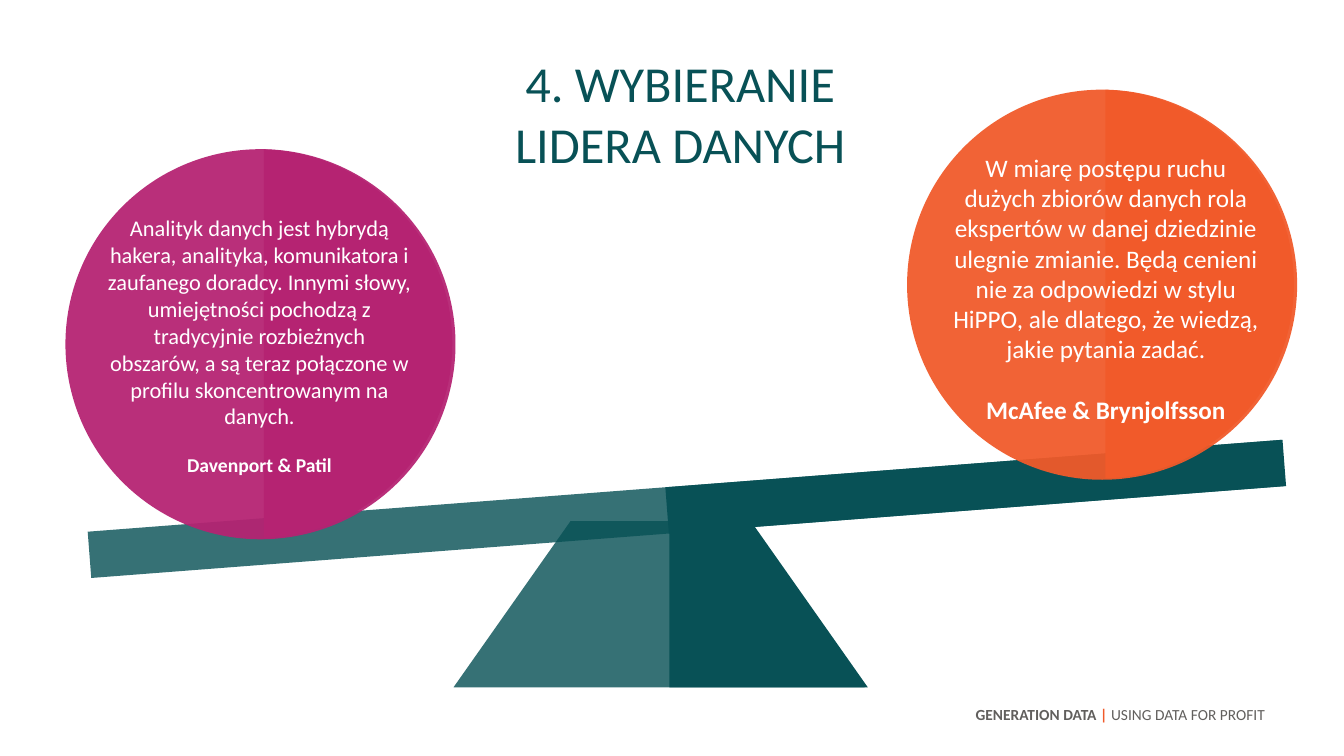
from math import acos, cos, sin

from lxml.etree import SubElement
from pptx import Presentation
from pptx.dml.color import RGBColor
from pptx.enum.shapes import MSO_SHAPE as Preset
from pptx.enum.text import MSO_ANCHOR as Anchor, MSO_AUTO_SIZE as AutoSize, PP_ALIGN as Align
from pptx.oxml.ns import qn
from pptx.util import Cm, Pt

TEAL = RGBColor(0x08, 0x51, 0x56)
MAGENTA = RGBColor(0xB5, 0x23, 0x72)
ORANGE = RGBColor(0xF1, 0x5A, 0x2A)
GREY = RGBColor(0x61, 0x5F, 0x5D)
WHITE = RGBColor(0xFF, 0xFF, 0xFF)

BALL_SIZE = 9.83
TITLE_ONLY = 5


class SlideBuilder:
    font = "Calibri"

    def __init__(self, presentation):
        self.slide = presentation.slides.add_slide(presentation.slide_layouts[TITLE_ONLY])
        self.shapes = self.slide.shapes

    def paint(self, shape, color, opacity=100):
        shape.shadow.inherit = False
        shape.line.fill.background()
        shape.fill.solid()
        shape.fill.fore_color.rgb = color
        if opacity < 100:
            color_node = shape.element.spPr.find(qn("a:solidFill"))[0]
            SubElement(color_node, qn("a:alpha"), val=str(opacity * 1000))

    def preset(self, kind, box, color, opacity=100, rotation=0):
        shape = self.shapes.add_shape(kind, *map(Cm, box))
        shape.rotation = rotation
        self.paint(shape, color, opacity)

    def outline(self, points, color, opacity=100):
        start, *rest = [(Cm(x), Cm(y)) for x, y in points]
        builder = self.shapes.build_freeform(*start)
        builder.add_line_segments(rest, close=True)
        self.paint(builder.convert_to_shape(), color, opacity)

    def style(self, run, size, color, bold=False):
        run.font.name = self.font
        run.font.size = Pt(size)
        run.font.bold = bold
        run.font.color.rgb = color

    def title(self, text, box, size, color):
        heading = self.shapes.title
        heading.left, heading.top, heading.width, heading.height = map(Cm, box)
        frame = heading.text_frame
        frame.text = text
        frame.word_wrap = True
        frame.auto_size = AutoSize.NONE
        frame.vertical_anchor = Anchor.TOP
        heading_line = frame.paragraphs[0]
        heading_line.alignment = Align.CENTER
        self.style(heading_line.runs[0], size, color)

    def text(self, box, paragraphs, align):
        """Each paragraph is (space before, [(text, size, color, bold), ...])."""
        frame = self.shapes.add_textbox(*map(Cm, box)).text_frame
        frame.word_wrap = True
        for index, (gap, pieces) in enumerate(paragraphs):
            paragraph = frame.add_paragraph() if index else frame.paragraphs[0]
            paragraph.alignment = align
            paragraph.space_before = Pt(gap)
            for words, *look in pieces:
                run = paragraph.add_run()
                run.text = words
                self.style(run, *look)

    def ball(self, left, top, color):
        """A translucent disc with a solid right half."""
        self.preset(Preset.OVAL, (left, top, BALL_SIZE, BALL_SIZE), color, 94)
        radius, center_x, center_y = 4.9, left + 4.85, top + 4.9
        half_angle = acos(0.15 / radius)
        steps = 60
        angles = [half_angle * (2 * step / steps - 1) for step in range(steps + 1)]
        self.outline([(center_x + radius * cos(a), center_y + radius * sin(a))
                      for a in angles], color)

    def quote(self, box, words, size, author, author_size, gap):
        self.text(box, [(0, [(words, size, WHITE, False)]),
                        (gap, [(author, author_size, WHITE, True)])], Align.CENTER)


def main():
    presentation = Presentation()
    presentation.slide_width, presentation.slide_height = Cm(33.87), Cm(19.05)
    page = SlideBuilder(presentation)

    # Seesaw: stand, then plank
    stand_top, stand_bottom = 13.13, 17.32
    page.outline([(14.38, stand_top), (18.85, stand_top),
                  (21.79, stand_bottom), (11.43, stand_bottom)], TEAL, 81)
    page.outline([(16.87, stand_top), (18.92, stand_top),
                  (21.87, stand_bottom), (16.87, stand_bottom)], TEAL)
    tilt = 355.6
    page.preset(Preset.RECTANGLE, (2.21, 12.24, 30.18, 1.17), TEAL, 81, tilt)
    page.preset(Preset.RECTANGLE, (16.79, 11.68, 15.6, 1.17), TEAL, rotation=tilt)

    # Footer and title
    page.text((1.45, 17.65, 30.68, 1.14),
              [(2.2, [("GENERATION DATA ", 11, GREY, True),
                      ("|", 11, ORANGE, True),
                      (" USING DATA FOR PROFIT", 11, GREY, False)])], Align.RIGHT)
    page.title("4. WYBIERANIE LIDERA DANYCH", (12.65, 1.19, 8.99, 3.33), 36, TEAL)

    # Quotes on the two balls
    page.ball(1.65, 3.76, MAGENTA)
    page.quote((2.44, 5.28, 8.2, 9.4),
               "Analityk danych jest hybrydą hakera, analityka, komunikatora i zaufanego "
               "doradcy. Innymi słowy, umiejętności pochodzą z tradycyjnie rozbieżnych "
               "obszarów, a są teraz połączone w profilu skoncentrowanym na danych.",
               16, "Davenport & Patil", 14, 17)
    page.ball(22.86, 2.26, ORANGE)
    page.quote((23.77, 3.71, 8.2, 7.95),
               "W miarę postępu ruchu dużych zbiorów danych rola ekspertów w danej "
               "dziedzinie ulegnie zmianie. Będą cenieni nie za odpowiedzi w stylu HiPPO, "
               "ale dlatego, że wiedzą, jakie pytania zadać.",
               18, "McAfee & Brynjolfsson", 18, 22)

    presentation.save("out.pptx")


if __name__ == "__main__":
    main()
